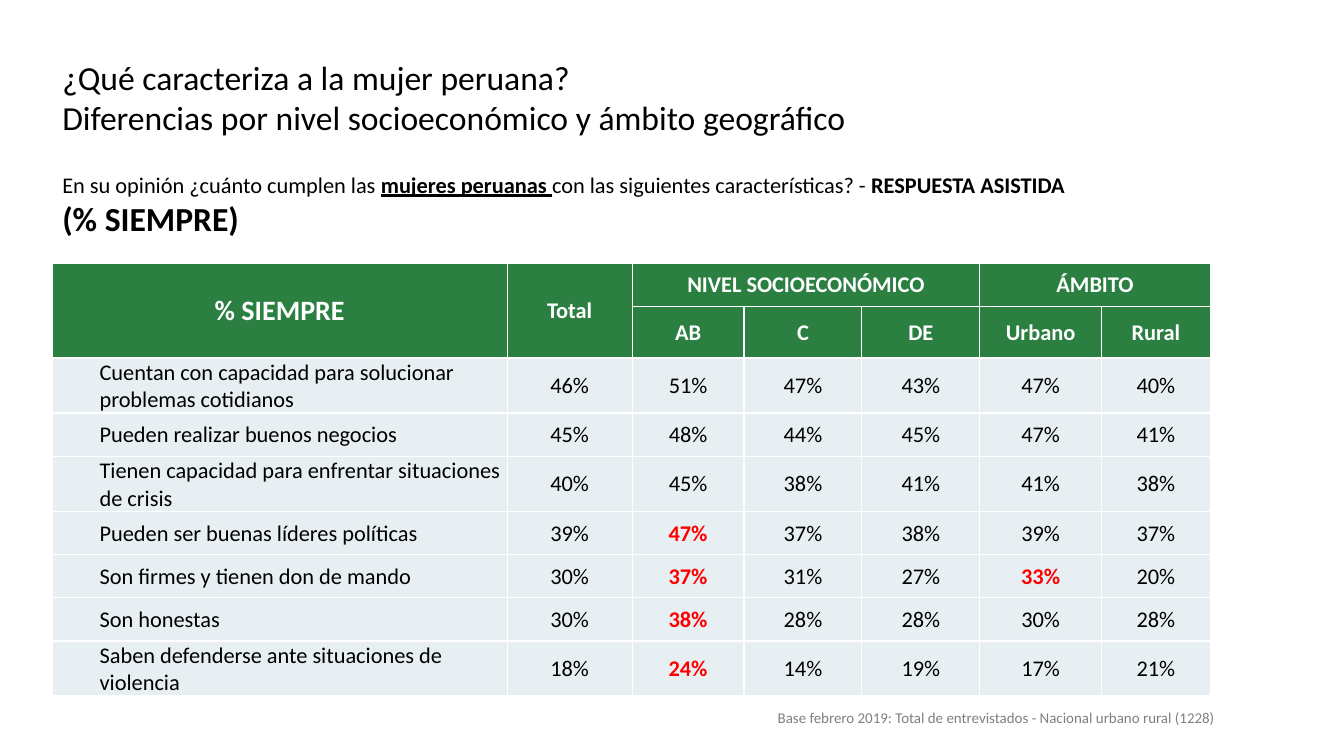
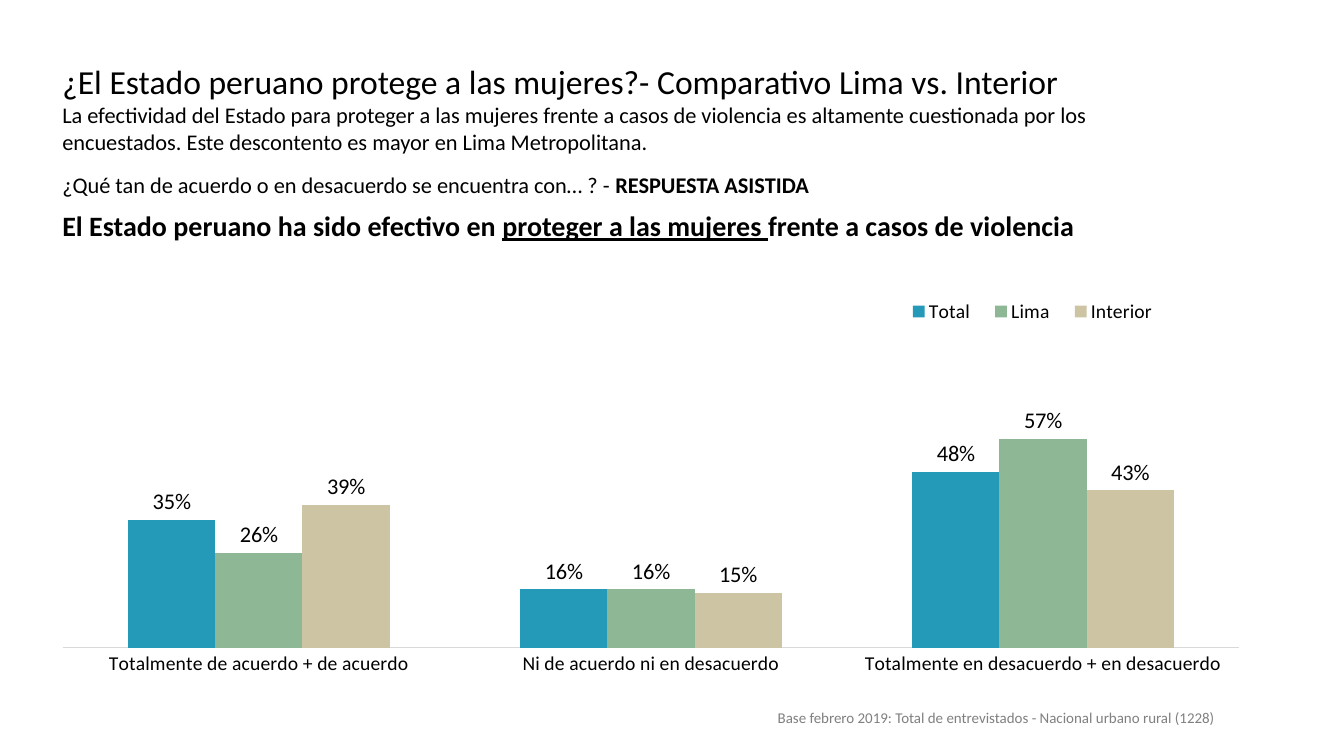
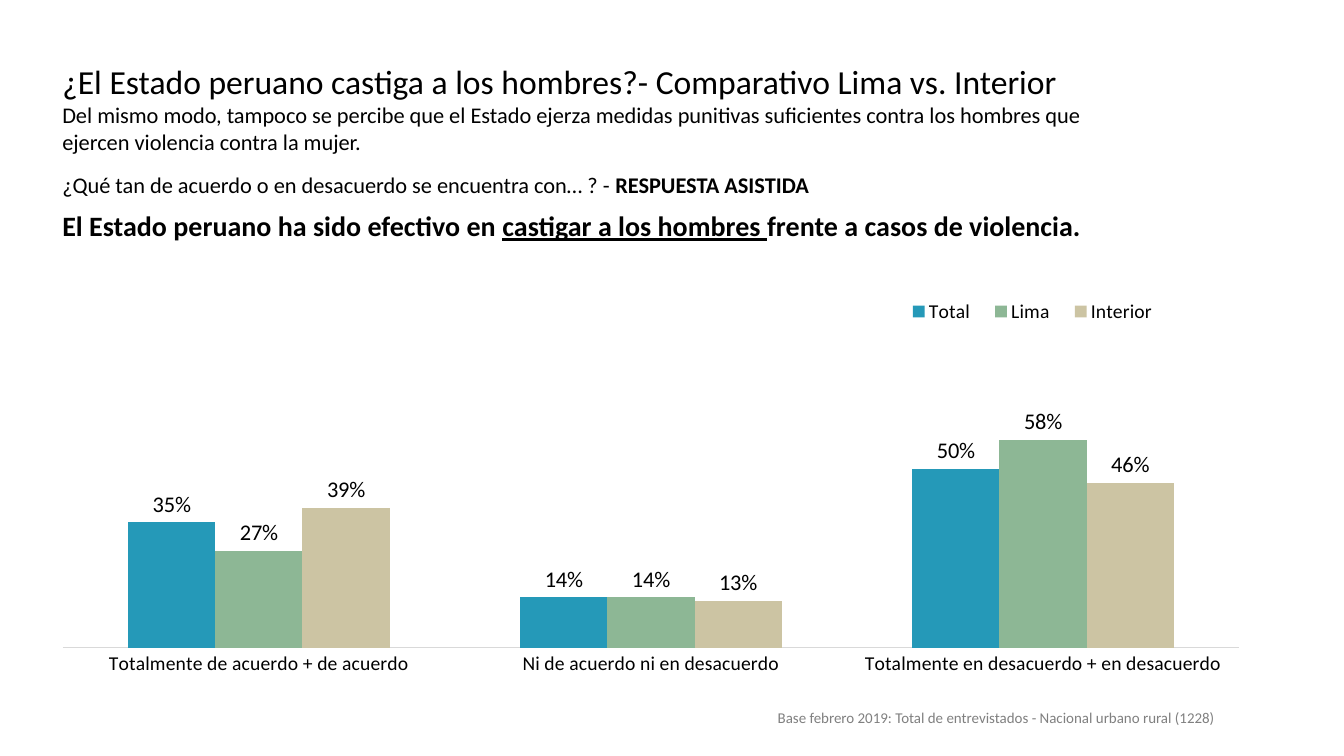
from lxml import etree
from pptx import Presentation
from pptx import util as u
from pptx.chart import data
from pptx.dml import color
from pptx.enum import chart as ch, text
from pptx.oxml import ns

HUES = {"ink": "000000", "grey": "808080", "rule": "D9D9D9", "white": "FFFFFF",
        "green": "2B8041", "pale": "E8EFF3", "red": "FF0000",
        "Total": "2599B8", "Lima": "8DB795", "Interior": "CCC4A3"}
FACE = "Calibri"
LEFT = 1.32
CATS = ["Totalmente de acuerdo + de acuerdo", "Ni de acuerdo ni en desacuerdo",
        "Totalmente en desacuerdo + en desacuerdo"]


def rgb(name):
    return color.RGBColor.from_string(HUES[name])


def style(font, size, hue="ink", bold=False):
    font.name, font.size, font.bold = FACE, u.Pt(size), bold
    font.color.rgb = rgb(hue)


def place(node, spot, area, inner=False):
    """Give a chart part a fixed place, as fractions of the chart."""
    old = node.find(ns.qn("c:layout"))
    if old is not None:
        node.remove(old)
    frame = etree.Element(ns.qn("c:layout"))
    node.insert(spot, frame)
    man = etree.SubElement(frame, ns.qn("c:manualLayout"))
    tags = [("layoutTarget", "inner")] if inner else []
    tags += [("xMode", "edge"), ("yMode", "edge"), *zip("xywh", area)]
    for tag, val in tags:
        etree.SubElement(man, ns.qn("c:" + tag)).set("val", str(val))


def edge(cell):
    """Draw thin white borders round a cell."""
    props = cell._tc.get_or_add_tcPr()
    for spot, side in enumerate(("lnL", "lnR", "lnT", "lnB")):
        line = etree.Element(ns.qn("a:" + side), w=str(u.Pt(1)))
        fill = etree.SubElement(line, ns.qn("a:solidFill"))
        etree.SubElement(fill, ns.qn("a:srgbClr"), val=HUES["white"])
        props.insert(spot, line)


class Deck:
    def __init__(self):
        self.prs = Presentation()
        self.prs.slide_width, self.prs.slide_height = u.Cm(33.87), u.Cm(19.05)

    def page(self):
        self.slide = self.prs.slides.add_slide(self.prs.slide_layouts[6])
        base = "Base febrero 2019: Total de entrevistados - Nacional urbano rural (1228)"
        para = self.text((19.35, 17.78, 14.5, 0.66), [(10.7, [base])], "grey")[0]
        para.line_spacing = 0.9

    def text(self, box, lines, hue="ink"):
        """Lines are (size, runs); a run is a string or (string, marks b and u)."""
        frame = self.slide.shapes.add_textbox(*map(u.Cm, box)).text_frame
        frame.word_wrap = True
        for i, (size, runs) in enumerate(lines):
            para = frame.add_paragraph() if i else frame.paragraphs[0]
            runs = [(r, "") if isinstance(r, str) else r for r in runs]
            heavy = all("b" in marks for _, marks in runs)
            style(para.font, size, hue, heavy)
            for words, marks in runs:
                run = para.add_run()
                run.text = words
                if "b" in marks and not heavy:
                    run.font.bold = True
                if "u" in marks:
                    run.font.underline = True
        return frame.paragraphs

    def title(self, top, lines):
        self.text((LEFT, top, 27.05, 3.4), lines)

    def ask(self, lines):
        self.text((LEFT, 4.18, 28.8, 0.95), lines)

    def cell(self, cell, words, size=16, hue="ink", fill="pale", bold=False, pad=0.03):
        cell.text = words
        cell.vertical_anchor = text.MSO_ANCHOR.MIDDLE
        cell.margin_left, cell.margin_right = u.Cm(pad), u.Cm(0.03)
        cell.margin_top, cell.margin_bottom = u.Cm(0.03), 0
        cell.fill.solid()
        cell.fill.fore_color.rgb = rgb(fill)
        para = cell.text_frame.paragraphs[0]
        para.alignment = text.PP_ALIGN.LEFT if pad > 1 else text.PP_ALIGN.CENTER
        style(para.font, size, hue, bold)
        edge(cell)

    def table(self, heads, rows, spans, hot):
        wide = [11.46, 3.15, 2.82, 2.97, 2.97, 3.07, 2.74]
        high = [1.09, 1.3] + [1.09] * len(rows)
        grid = self.slide.shapes.add_table(
            len(high), len(wide), u.Cm(LEFT), u.Cm(6.63),
            u.Cm(sum(wide)), u.Cm(sum(high))).table
        for col, size in zip(grid.columns, wide):
            col.width = u.Cm(size)
        for row, size in zip(grid.rows, high):
            row.height = u.Cm(size)
        for r, row in enumerate(heads):
            for c, words in enumerate(row):
                self.cell(grid.cell(r, c), words, 16 if r or c else 20, "white", "green", True)
        for r, (label, *vals) in enumerate(rows):
            self.cell(grid.cell(r + 2, 0), label, pad=1.19)
            for c, val in enumerate(vals, 1):
                mark = (r, c) in hot
                self.cell(grid.cell(r + 2, c), f"{val}%", hue="red" if mark else "ink", bold=mark)
        for start, end in spans:
            grid.cell(*start).merge(grid.cell(*end))

    def chart(self, series, peak, top, high):
        source = data.CategoryChartData(number_format="0%")
        source.categories = CATS
        for name, vals in series.items():
            source.add_series(name, vals)
        box = map(u.Cm, (1.04, 7.34, 30.28, 11.28))
        chart = self.slide.shapes.add_chart(
            ch.XL_CHART_TYPE.COLUMN_CLUSTERED, *box, source).chart
        chart.has_title = False
        style(chart.font, 14)
        # Columns and their labels
        plot = chart.plots[0]
        plot.vary_by_categories = False
        plot.gap_width, plot.overlap = 150, 0
        for bar in plot.series:
            bar.format.fill.solid()
            bar.format.fill.fore_color.rgb = rgb(bar.name)
        plot.has_data_labels = True
        tags = plot.data_labels
        tags.show_value = True
        tags.number_format, tags.number_format_is_linked = "0%", False
        tags.position = ch.XL_LABEL_POSITION.OUTSIDE_END
        style(tags.font, 16)
        # Axes
        axis = chart.value_axis
        axis.minimum_scale, axis.maximum_scale = 0, peak
        axis.has_major_gridlines = axis.visible = False
        axis = chart.category_axis
        axis.major_tick_mark = ch.XL_TICK_MARK.NONE
        axis.format.line.color.rgb = rgb("rule")
        axis.format.line.width = u.Pt(0.75)
        style(axis.tick_labels.font, 14)
        # Legend and plot area
        chart.has_legend = True
        key = chart.legend
        key.position = ch.XL_LEGEND_POSITION.TOP
        key.include_in_layout = False
        style(key.font, 14)
        place(key._element, 1, (0.71, 0.01, 0.23, 0.07))
        place(chart._chartSpace.chart.plotArea, 0, (0.018, top, 0.979, high), True)

    def state(self, head, note, act, tail, series, peak, top, high):
        """A full slide on what the state has done, with its chart."""
        self.page()
        self.title(1.4, [(24, [head]), (16, [note])])
        self.chart(series, peak, top, high)
        self.ask([(16, ["¿Qué tan de acuerdo o en desacuerdo se encuentra con… ? - ",
                        ("RESPUESTA ASISTIDA", "b")])])
        self.text((LEFT, 5.13, 27.5, 1.12), [
            (20, [("El Estado peruano ha sido efectivo en ", "b"), (act, "bu"), (tail, "b")])])


def main():
    deck = Deck()

    # Traits by level and area
    deck.page()
    deck.title(1.3, [(24, ["¿Qué caracteriza a la mujer peruana?"]),
                     (24, ["Diferencias por nivel socioeconómico y ámbito geográfico"])])
    heads = [["% SIEMPRE", "Total", "NIVEL SOCIOECONÓMICO", "", "", "ÁMBITO", ""],
             ["", "", "AB", "C", "DE", "Urbano", "Rural"]]
    rows = [
        ("Cuentan con capacidad para solucionar problemas cotidianos", 46, 51, 47, 43, 47, 40),
        ("Pueden realizar buenos negocios", 45, 48, 44, 45, 47, 41),
        ("Tienen capacidad para enfrentar situaciones de crisis", 40, 45, 38, 41, 41, 38),
        ("Pueden ser buenas líderes políticas", 39, 47, 37, 38, 39, 37),
        ("Son firmes y tienen don de mando", 30, 37, 31, 27, 33, 20),
        ("Son honestas", 30, 38, 28, 28, 30, 28),
        ("Saben defenderse ante situaciones de violencia", 18, 24, 14, 19, 17, 21)]
    spans = [((0, 0), (1, 0)), ((0, 1), (1, 1)), ((0, 2), (0, 4)), ((0, 5), (0, 6))]
    deck.table(heads, rows, spans, hot={(3, 2), (4, 2), (5, 2), (6, 2), (4, 5)})
    deck.ask([(16, ["En su opinión ¿cuánto cumplen las ", ("mujeres peruanas ", "bu"),
                    "con las siguientes características? - ", ("RESPUESTA ASISTIDA", "b")]),
              (24, [("(% SIEMPRE)", "b")])])

    # Protecting women
    deck.state(
        "¿El Estado peruano protege a las mujeres?- Comparativo Lima vs. Interior",
        "La efectividad del Estado para proteger a las mujeres frente a casos de violencia es "
        "altamente cuestionada por los encuestados. Este descontento es mayor en Lima "
        "Metropolitana.",
        "proteger a las mujeres ", "frente a casos de violencia",
        {"Total": (0.35, 0.16, 0.48), "Lima": (0.26, 0.16, 0.57),
         "Interior": (0.39, 0.15, 0.43)}, 0.6, 0.306, 0.491)

    # Punishing men
    deck.state(
        "¿El Estado peruano castiga a los hombres?- Comparativo Lima vs. Interior",
        "Del mismo modo, tampoco se percibe que el Estado ejerza medidas punitivas suficientes "
        "contra los hombres que ejercen violencia contra la mujer.",
        "castigar a los hombres ", "frente a casos de violencia.",
        {"Total": (0.35, 0.14, 0.5), "Lima": (0.27, 0.14, 0.58),
         "Interior": (0.39, 0.13, 0.46)}, 0.7, 0.237, 0.559)

    deck.prs.save("out.pptx")


if __name__ == "__main__":
    main()
